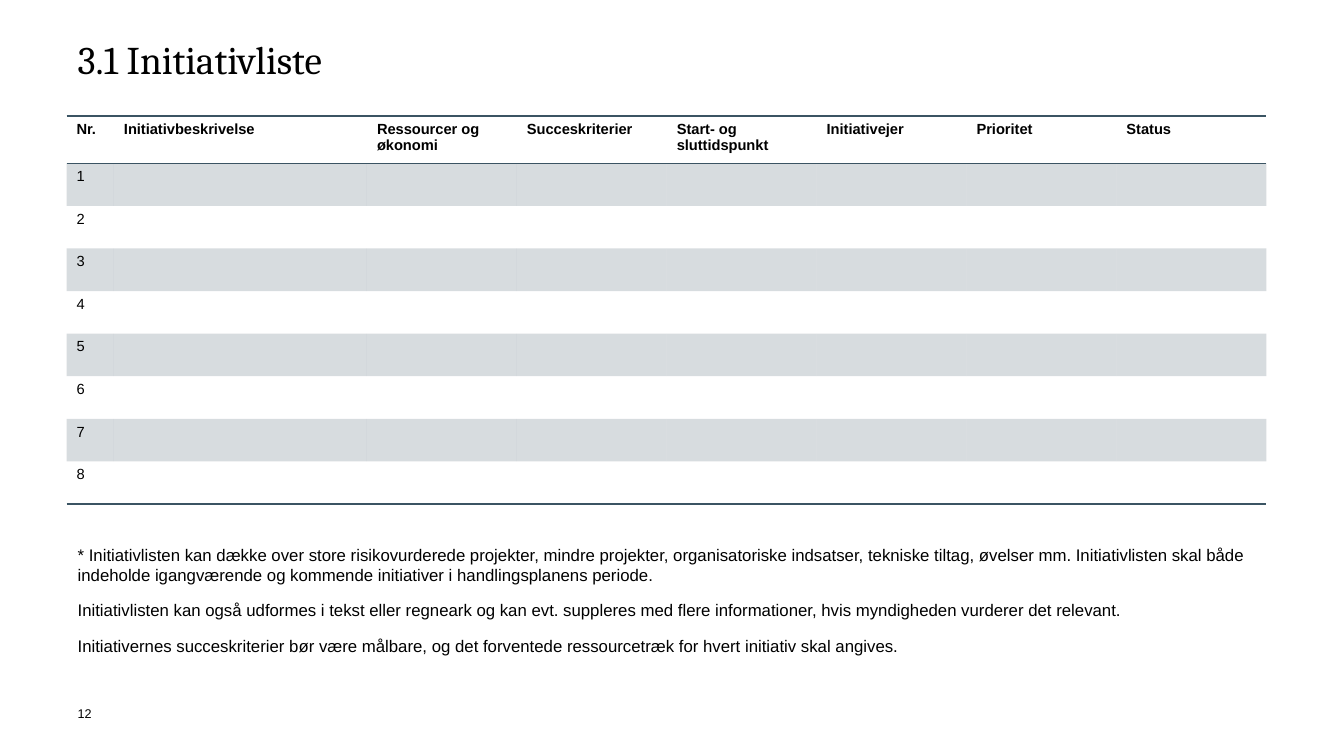
from pptx import Presentation
from pptx.dml.color import RGBColor
from pptx.enum.text import MSO_ANCHOR, MSO_AUTO_SIZE, PP_ALIGN
from pptx.oxml import parse_xml
from pptx.oxml.ns import nsdecls, qn
from pptx.util import Inches, Pt

HUES = {"ink": "000000", "slate": "3B5463"}
PLAIN = "{2D5ABB26-0587-4C30-8999-92F81FD0307C}"
HEADS = ["Nr.", "Initiativbeskrivelse", "Ressourcer og økonomi", "Succeskriterier",
         "Start- og sluttidspunkt", "Initiativejer", "Prioritet", "Status"]
NOTES = [
    "* Initiativlisten kan dække over store risikovurderede projekter, mindre projekter, "
    "organisatoriske indsatser, tekniske tiltag, øvelser mm. Initiativlisten skal både "
    "indeholde igangværende og kommende initiativer i handlingsplanens periode.",
    "Initiativlisten kan også udformes i tekst eller regneark og kan evt. suppleres med flere "
    "informationer, hvis myndigheden vurderer det relevant.",
    "Initiativernes succeskriterier bør være målbare, og det forventede ressourcetræk "
    "for hvert initiativ skal angives.",
]


def write(frame, *lines, size=12, font="Arial", bold=False, lead=1.0, gap=0, bare=False):
    frame.word_wrap = True
    for at, line in enumerate(lines):
        para = frame.add_paragraph() if at else frame.paragraphs[0]
        if bare:
            props = para._p.get_or_add_pPr()
            props.set("marL", "0")
            props.set("indent", "0")
            props.append(parse_xml(f"<a:buNone {nsdecls('a')}/>"))
        para.alignment = PP_ALIGN.LEFT
        para.line_spacing = lead
        para.space_before = Pt(gap if at else 0)
        run = para.add_run()
        run.text = line
        run.font.name = font
        run.font.size = Pt(size)
        run.font.bold = bold
        run.font.color.rgb = RGBColor.from_string(HUES["ink"])


class Sheet:
    def __init__(self, deck):
        self.slide = deck.slides.add_slide(deck.slide_layouts[1])

    def place(self, shape, box):
        shape.left, shape.top, shape.width, shape.height = map(Inches, box)
        frame = shape.text_frame
        frame.margin_left = frame.margin_right = 0
        frame.margin_top = frame.margin_bottom = 0
        frame.vertical_anchor = MSO_ANCHOR.TOP
        frame.auto_size = MSO_AUTO_SIZE.NONE
        return frame

    def title(self, text, box):
        frame = self.place(self.slide.shapes.title, box)
        write(frame, text, size=28, font="Cambria", lead=0.9)

    def body(self, lines, box):
        frame = self.place(self.slide.placeholders[1], box)
        write(frame, *lines, gap=11, bare=True)

    def label(self, text, box):
        shape = self.slide.shapes.add_textbox(*map(Inches, box))
        write(self.place(shape, box), text, size=9)

    def edge(self, cell, side):
        cell._tc.get_or_add_tcPr().append(parse_xml(
            f'<a:{side} {nsdecls("a")} w="12700"><a:solidFill>'
            f'<a:srgbClr val="{HUES["slate"]}"/></a:solidFill></a:{side}>'))

    def tint(self, cell):
        cell.fill.solid()
        cell.fill.fore_color.rgb = RGBColor.from_string(HUES["slate"])
        tone = cell._tc.tcPr.find(".//" + qn("a:srgbClr"))
        tone.append(parse_xml(f'<a:alpha {nsdecls("a")} val="20000"/>'))

    def table(self, rows, wide, tall, box):
        grid = self.slide.shapes.add_table(len(rows), len(wide), *map(Inches, box)).table
        grid._tbl.tblPr.find(qn("a:tableStyleId")).text = PLAIN
        for col, width in zip(grid.columns, wide):
            col.width = Inches(width)
        for y, (row, height) in enumerate(zip(rows, tall)):
            grid.rows[y].height = Inches(height)
            for x in range(len(wide)):
                cell = grid.cell(y, x)
                if y == 0:
                    self.edge(cell, "lnT")
                if y in (0, len(rows) - 1):
                    self.edge(cell, "lnB")
                if y % 2:
                    self.tint(cell)
                else:
                    cell.fill.background()
                if x < len(row):
                    write(cell.text_frame, row[x], size=10.5, bold=y == 0)


def main():
    deck = Presentation()
    deck.slide_width, deck.slide_height = Inches(13.33), Inches(7.5)
    sheet = Sheet(deck)
    sheet.title("3.1 Initiativliste", (0.77, 0.4, 11.8, 1.02))
    rows = [HEADS] + [[str(num)] for num in range(1, 9)]
    wide, tall = 11.9, 3.85
    first, second, head = 0.47, 2.51, 0.47
    sheet.table(rows, [first, second] + [(wide - first - second) / 6] * 6,
                [head] + [(tall - head) / 8] * 8, (0.66, 1.15, wide, tall))
    sheet.body(NOTES, (0.77, 5.4, 11.8, 1.47))
    sheet.label("12", (0.77, 7, 0.31, 0.3))
    deck.save("out.pptx")


if __name__ == "__main__":
    main()
